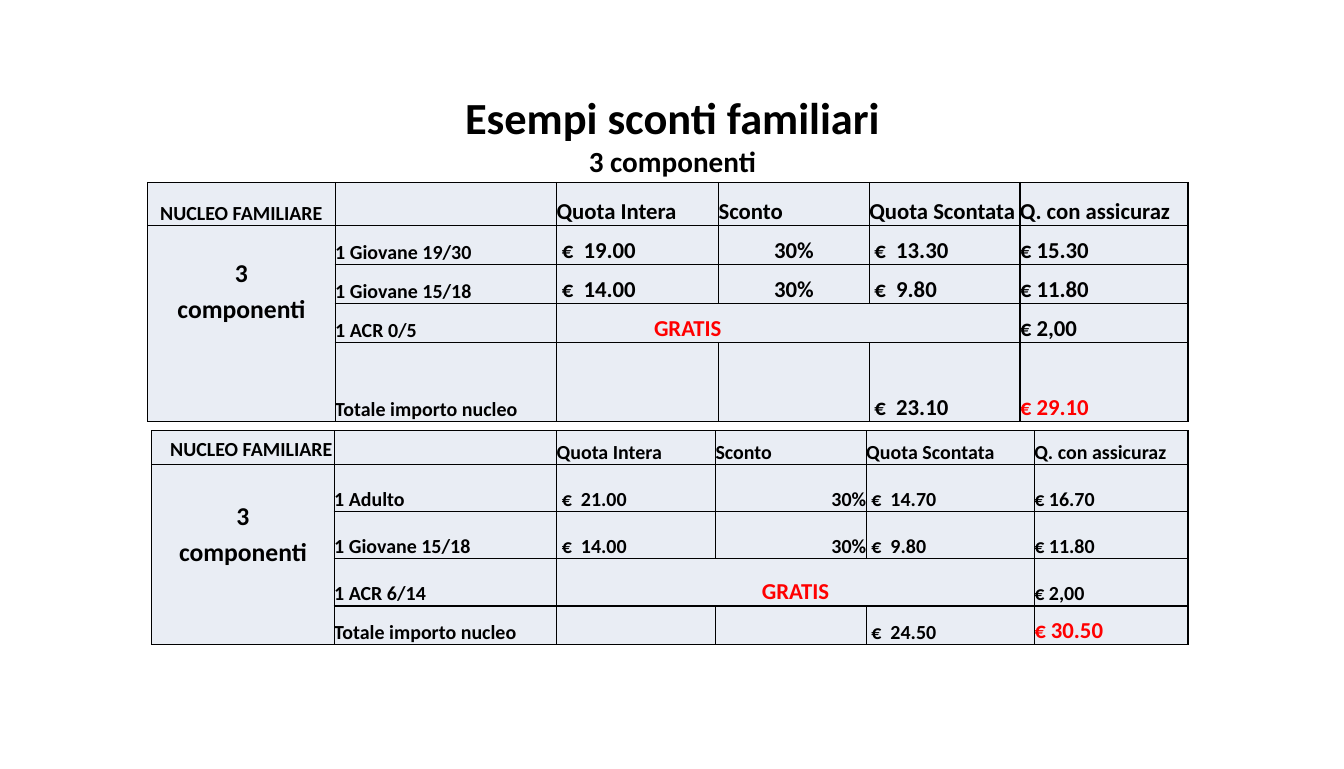
from lxml import etree
from pptx import Presentation
from pptx.dml.color import RGBColor
from pptx.enum.text import MSO_ANCHOR as Anchor, PP_ALIGN as Align
from pptx.oxml.ns import qn
from pptx.util import Inches, Pt

BLACK = RGBColor(0x00, 0x00, 0x00)
RED = RGBColor(0xFF, 0x00, 0x00)
PALE_BLUE = RGBColor(0xE9, 0xED, 0xF4)
FONT = "Calibri"

# Content
TITLE = [("Esempi sconti familiari", 31.2), ("3 componenti", 20.5)]
HEADER = ["NUCLEO FAMILIARE", "", "Quota Intera", "Sconto",
          "Quota Scontata", "Q. con assicuraz"]
FAMILY = "3\ncomponenti"
TOTAL = "Totale importo nucleo"
TABLES = [
    dict(left=1.44, top=1.78, size=16, discount=Align.CENTER,
         cols=[1.83, 2.16, 1.58, 1.47, 1.47, 1.64],
         heights=[0.42, 0.38, 0.38, 0.38, 0.77],
         family_inset=0.27,
         corner=dict(align=Align.CENTER),
         free=dict(inset=0.95),
         rows=[HEADER,
               [FAMILY, "1 Giovane 19/30", "€  19.00", "30%", "€  13.30", "€ 15.30"],
               ["", "1 Giovane 15/18", "€  14.00", "30%", "€  9.80", "€ 11.80"],
               ["", "1 ACR 0/5", "GRATIS", "", "", "€ 2,00"],
               ["", TOTAL, "", "", "€  23.10", "€ 29.10"]]),
    dict(left=1.48, top=4.2, size=14, discount=Align.RIGHT,
         cols=[1.78, 2.17, 1.55, 1.47, 1.64, 1.5],
         heights=[0.33, 0.46, 0.46, 0.46, 0.38],
         family_inset=0.31,
         corner=dict(inset=0.18, anchor=Anchor.MIDDLE),
         free=dict(align=Align.CENTER),
         rows=[HEADER,
               [FAMILY, "1 Adulto", "€  21.00", "30%", "€  14.70", "€ 16.70"],
               ["", "1 Giovane 15/18", "€  14.00", "30%", "€  9.80", "€ 11.80"],
               ["", "1 ACR 6/14", "GRATIS", "", "", "€ 2,00"],
               ["", TOTAL, "", "", "€  24.50", "€ 30.50"]]),
]


def style_run(r, size, color=BLACK):
    r.font.name = FONT
    r.font.size = Pt(size)
    r.font.bold = True
    r.font.color.rgb = color


def add_borders(cell):
    tcPr = cell._tc.get_or_add_tcPr()
    for i, side in enumerate(("lnL", "lnR", "lnT", "lnB")):
        ln = etree.Element(qn("a:" + side), w=str(Pt(1)))
        fill = etree.SubElement(ln, qn("a:solidFill"))
        etree.SubElement(fill, qn("a:srgbClr"), val=str(BLACK))
        tcPr.insert(i, ln)


def fill_cell(cell, text, size, color=BLACK, align=Align.LEFT,
              anchor=Anchor.BOTTOM, inset=0, top=0):
    cell.margin_left, cell.margin_top = Inches(inset), Inches(top)
    cell.margin_right = cell.margin_bottom = 0
    cell.vertical_anchor = anchor
    cell.fill.solid()
    cell.fill.fore_color.rgb = PALE_BLUE
    add_borders(cell)
    if not text:
        return
    cell.text_frame.text = text
    for p in cell.text_frame.paragraphs:
        p.alignment = align
        p.line_spacing = 1.15
        for r in p.runs:
            style_run(r, size, color)


def cell_format(t, row, col, text):
    """Rules for size, colour and position by place in the table."""
    if (row, col) == (0, 0):
        return dict(size=14, **t["corner"])
    if text == FAMILY:
        return dict(size=18, align=Align.CENTER, anchor=Anchor.TOP,
                    top=t["family_inset"])
    if text == "GRATIS":
        return dict(size=16, color=RED, **t["free"])
    if (row, col) == (4, 5):
        return dict(size=16, color=RED)
    if col == 1:
        return dict(size=14)
    if col == 3 and row:
        return dict(size=t["size"], align=t["discount"])
    return dict(size=t["size"], inset=0.05 if row and col in (2, 4) else 0)


prs = Presentation()
prs.slide_width, prs.slide_height = Inches(13.11), Inches(7.5)
s = prs.slides.add_slide(prs.slide_layouts[6])

# Tables
for t in TABLES:
    table = s.shapes.add_table(
        len(t["rows"]), len(t["cols"]), Inches(t["left"]), Inches(t["top"]),
        Inches(sum(t["cols"])), Inches(sum(t["heights"]))).table
    table.first_row = table.horz_banding = False
    for column, width in zip(table.columns, t["cols"]):
        column.width = Inches(width)
    for table_row, height in zip(table.rows, t["heights"]):
        table_row.height = Inches(height)
    for row, texts in enumerate(t["rows"]):
        for col, text in enumerate(texts):
            fill_cell(table.cell(row, col), text, **cell_format(t, row, col, text))
    table.cell(1, 0).merge(table.cell(4, 0))
    table.cell(3, 2).merge(table.cell(3, 4))

# Title
tf = s.shapes.add_textbox(Inches(0.66), Inches(0.68),
                          Inches(11.8), Inches(1.25)).text_frame
tf.word_wrap = True
tf.vertical_anchor = Anchor.MIDDLE
tf.text = "\n".join(line for line, _ in TITLE)
for p, (_, size) in zip(tf.paragraphs, TITLE):
    p.alignment = Align.CENTER
    style_run(p.runs[0], size)

prs.save("out.pptx")
